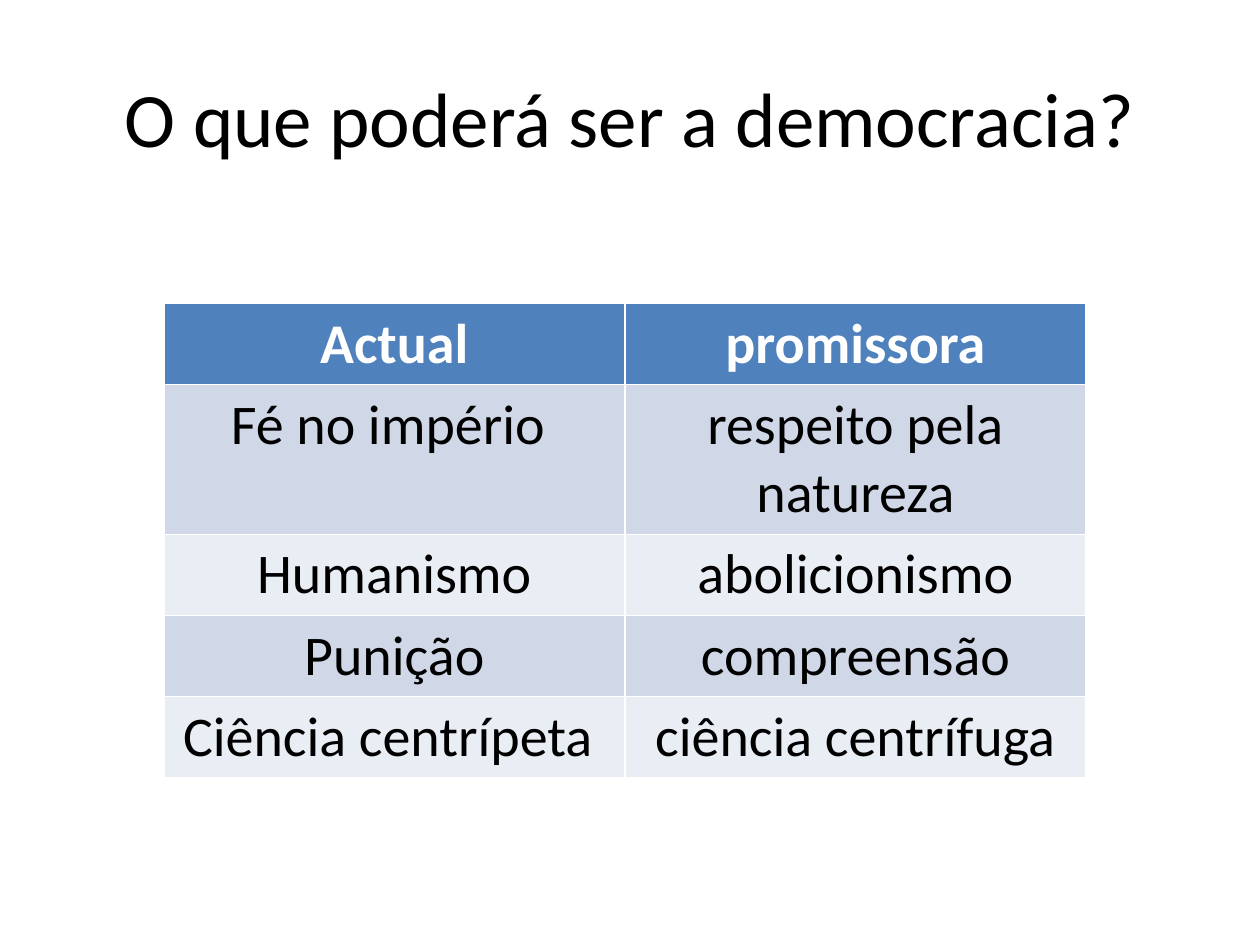
import pptx
import pptx.dml.color
import pptx.enum.text
import pptx.util

Inches = pptx.util.Inches
HEADER_FILL = "4F81BD"
BAND_FILLS = ("D0D8E8", "E9EDF4")
ROWS = [
    ("Actual", "promissora"),
    ("Fé no império ", "respeito pela natureza"),
    ("Humanismo", "abolicionismo"),
    ("Punição", "compreensão"),
    ("Ciência centrípeta ", "ciência centrífuga"),
]


def color(value):
    return pptx.dml.color.RGBColor.from_string(value)


def format_paragraph(paragraph, size, font_color, bold=False):
    paragraph.alignment = pptx.enum.text.PP_ALIGN.CENTER
    paragraph.font.name = "Calibri"
    paragraph.font.size = pptx.util.Pt(size)
    paragraph.font.bold = bold
    paragraph.font.color.rgb = color(font_color)


def place_title(slide, text, left, top, width, height):
    title = slide.shapes.title
    title.left, title.top = Inches(left), Inches(top)
    title.width, title.height = Inches(width), Inches(height)
    title.text_frame.text = text
    title.text_frame.vertical_anchor = pptx.enum.text.MSO_ANCHOR.MIDDLE
    format_paragraph(title.text_frame.paragraphs[0], 44, "000000")


def place_comparison_table(slide, rows, left, top, width, height):
    table = slide.shapes.add_table(
        len(rows), len(rows[0]),
        Inches(left), Inches(top), Inches(width), Inches(height),
    ).table
    for row_index, texts in enumerate(rows):
        is_header = row_index == 0
        fill = HEADER_FILL if is_header else BAND_FILLS[(row_index - 1) % 2]
        for column_index, text in enumerate(texts):
            cell = table.cell(row_index, column_index)
            cell.text = text
            cell.fill.solid()
            cell.fill.fore_color.rgb = color(fill)
            font_color = "FFFFFF" if is_header else "000000"
            format_paragraph(cell.text_frame.paragraphs[0], 32, font_color, is_header)


def main():
    presentation = pptx.Presentation()
    presentation.slide_width = Inches(10)
    presentation.slide_height = Inches(7.5)
    slide = presentation.slides.add_slide(presentation.slide_layouts[5])
    place_title(slide, "O que poderá ser a democracia?", 0.5, 0.3, 9, 1.25)
    place_comparison_table(slide, ROWS, 1.3, 2.41, 7.32, 2.05)
    presentation.save("out.pptx")


if __name__ == "__main__":
    main()
